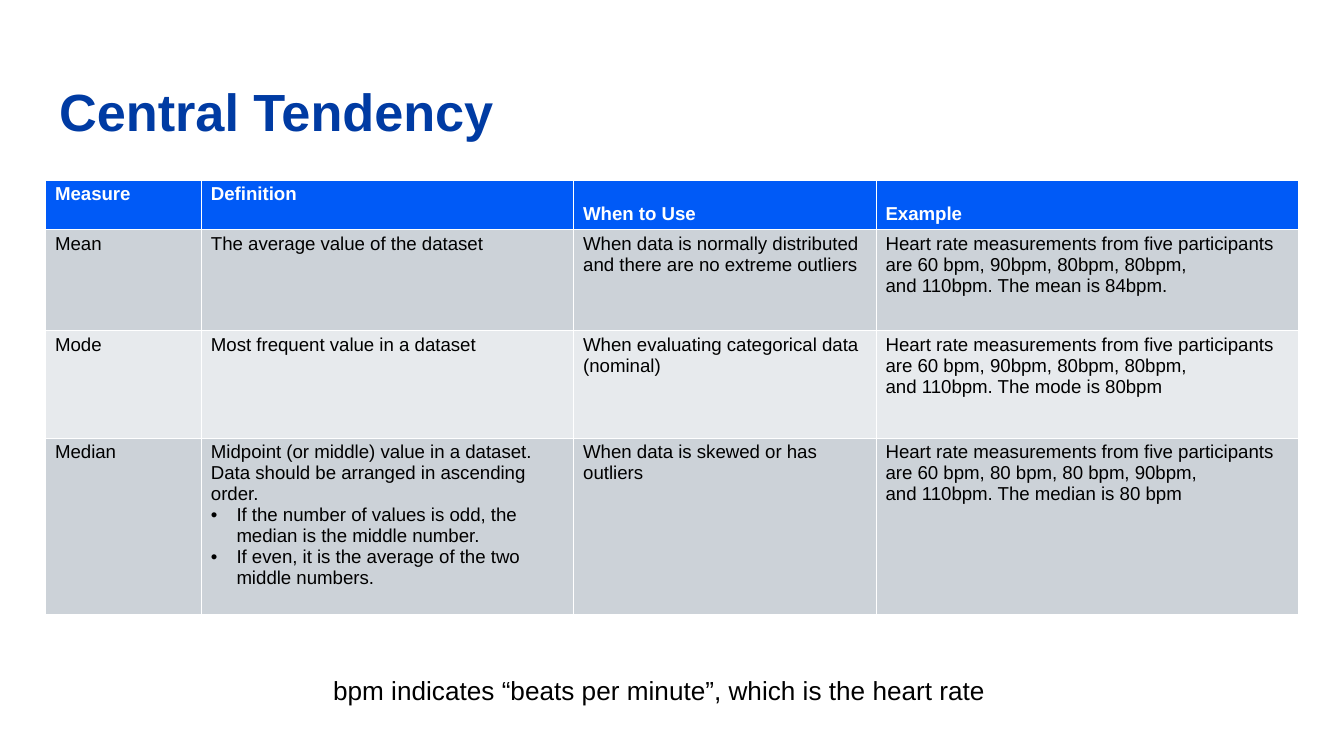
from dataclasses import dataclass

from lxml import etree
from pptx import Presentation
from pptx.dml.color import RGBColor
from pptx.enum.text import MSO_ANCHOR, MSO_AUTO_SIZE, PP_ALIGN
from pptx.oxml.ns import qn
from pptx.util import Inches, Pt

TOP = MSO_ANCHOR.TOP
LEFT = PP_ALIGN.LEFT
NO_AUTOFIT = MSO_AUTO_SIZE.NONE
GROW = MSO_AUTO_SIZE.SHAPE_TO_FIT_TEXT
TIE = "~"
HARD_SPACE = chr(160)


@dataclass(frozen=True)
class Theme:
    font: str = "Arial"
    title: str = "003BA3"
    header: str = "005AF7"
    bands: tuple[str, str] = ("CCD2D8", "E7EAED")
    light: str = "FFFFFF"
    dark: str = "000000"
    title_size: float = 28
    table_size: float = 10
    note_size: float = 14
    rule: float = 0.75
    header_rule: float = 0.88


@dataclass(frozen=True)
class Measure:
    name: str
    definition: tuple[str, ...]
    usage: str
    example: str
    rules: tuple[str, ...] = ()


THEME = Theme()
HEADINGS = ("Measure", "Definition", "When to Use", "Example")
LOWERED_HEADINGS = HEADINGS[2:]
COLUMN_WIDTHS = (1.16, 2.77, 2.25, 3.14)
ROW_HEIGHTS = (0.37, 0.75, 0.8, 1.31)
MEASURES = (
    Measure(
        "Mean",
        ("The average value~of the dataset",),
        "When data is normally~distributed and there are~no extreme outliers",
        "Heart rate measurements from~five participants are 60 bpm,~90bpm, "
        "80bpm, 80bpm, and~110bpm. The mean is 84bpm.",
    ),
    Measure(
        "Mode",
        ("Most frequent value~in a dataset",),
        "When evaluating~categorical data (nominal)",
        "Heart rate measurements from~five participants are 60 bpm,~90bpm, "
        "80bpm, 80bpm, and~110bpm. The mode is 80bpm",
    ),
    Measure(
        "Median",
        (
            "Midpoint (or~middle) value in a~dataset.",
            "Data should be arranged in ascending order.",
        ),
        "When data is skewed or~has outliers",
        "Heart rate measurements from~five participants are 60 bpm, 80 bpm, "
        "80 bpm,~90bpm, and~110bpm. The median is 80~bpm",
        (
            "If the number of values is~odd, the median is the~middle number.",
            "If even, it is the~average of the two middle numbers.",
        ),
    ),
)


def format_runs(paragraph, size: float, color: str, bold: bool = False) -> None:
    for run in paragraph.runs:
        run.font.name = THEME.font
        run.font.size = Pt(size)
        run.font.bold = bold
        run.font.color.rgb = RGBColor.from_string(color)


def add_bullet(paragraph) -> None:
    properties = paragraph._p.get_or_add_pPr()
    properties.set("marL", str(Inches(0.19)))
    properties.set("indent", str(-Inches(0.19)))
    bullet_color = etree.SubElement(properties, qn("a:buClr"))
    etree.SubElement(bullet_color, qn("a:srgbClr"), val=THEME.dark)
    etree.SubElement(properties, qn("a:buFont"), typeface=THEME.font)
    etree.SubElement(properties, qn("a:buChar"), char="•")


def set_borders(cell, top: float, bottom: float) -> None:
    properties = cell._tc.get_or_add_tcPr()
    widths = {"lnL": THEME.rule, "lnR": THEME.rule, "lnT": top, "lnB": bottom}
    for position, (side, width) in enumerate(widths.items()):
        line = etree.Element(qn(f"a:{side}"), w=str(Pt(width)))
        fill = etree.SubElement(line, qn("a:solidFill"))
        etree.SubElement(fill, qn("a:srgbClr"), val=THEME.light)
        properties.insert(position, line)


def fill_cell(cell, lines: tuple[str, ...], background: str, color: str,
              bold: bool = False, bullets: tuple[str, ...] = ()) -> None:
    cell.margin_left = cell.margin_right = Inches(0.07)
    cell.margin_top = cell.margin_bottom = Inches(0.03)
    cell.vertical_anchor = TOP
    cell.fill.solid()
    cell.fill.fore_color.rgb = RGBColor.from_string(background)
    cell.text_frame.text = "\n".join(lines + bullets).replace(TIE, HARD_SPACE)
    for position, paragraph in enumerate(cell.text_frame.paragraphs):
        if position >= len(lines):
            add_bullet(paragraph)
        format_runs(paragraph, THEME.table_size, color, bold)


def add_title(slide, text: str) -> None:
    title = slide.shapes.title
    title.left, title.top = Inches(0.34), Inches(0.49)
    title.width, title.height = Inches(9.32), Inches(0.63)
    frame = title.text_frame
    frame.text = text
    frame.auto_size = NO_AUTOFIT
    frame.vertical_anchor = TOP
    frame.margin_left = frame.margin_right = Inches(0.1)
    frame.margin_top = frame.margin_bottom = Inches(0.1)
    frame.paragraphs[0].alignment = LEFT
    format_runs(frame.paragraphs[0], THEME.title_size, THEME.title, True)


def add_measures(slide) -> None:
    table = slide.shapes.add_table(
        len(ROW_HEIGHTS), len(COLUMN_WIDTHS), Inches(0.34), Inches(1.34),
        Inches(sum(COLUMN_WIDTHS)), Inches(sum(ROW_HEIGHTS)),
    ).table
    for column, width in zip(table.columns, COLUMN_WIDTHS):
        column.width = Inches(width)
    for row, height in zip(table.rows, ROW_HEIGHTS):
        row.height = Inches(height)

    for cell, heading in zip(table.rows[0].cells, HEADINGS):
        fill_cell(cell, (heading,), THEME.header, THEME.light, True)
        if heading in LOWERED_HEADINGS:
            cell.text_frame.paragraphs[0].line_spacing = Pt(21.8)
        set_borders(cell, THEME.rule, THEME.header_rule)

    for index, measure in enumerate(MEASURES):
        band = THEME.bands[index % 2]
        top_rule = THEME.rule if index else THEME.header_rule
        name, definition, usage, example = table.rows[index + 1].cells
        fill_cell(name, (measure.name,), band, THEME.dark)
        fill_cell(definition, measure.definition, band, THEME.dark,
                  bullets=measure.rules)
        fill_cell(usage, (measure.usage,), band, THEME.dark)
        fill_cell(example, (measure.example,), band, THEME.dark)
        for cell in (name, definition, usage, example):
            set_borders(cell, top_rule, THEME.rule)


def add_note(slide, text: str) -> None:
    note = slide.shapes.add_textbox(
        Inches(2.38), Inches(4.97), Inches(7.62), Inches(0.34))
    frame = note.text_frame
    frame.word_wrap = True
    frame.auto_size = GROW
    frame.text = text
    format_runs(frame.paragraphs[0], THEME.note_size, THEME.dark)


def main() -> None:
    presentation = Presentation()
    presentation.slide_width = Inches(10)
    presentation.slide_height = presentation.slide_width * 9 // 16
    slide = presentation.slides.add_slide(presentation.slide_layouts[5])
    add_title(slide, "Central Tendency")
    add_measures(slide)
    add_note(slide, "bpm indicates “beats per minute”, which is the heart rate")
    presentation.save("out.pptx")


if __name__ == "__main__":
    main()
